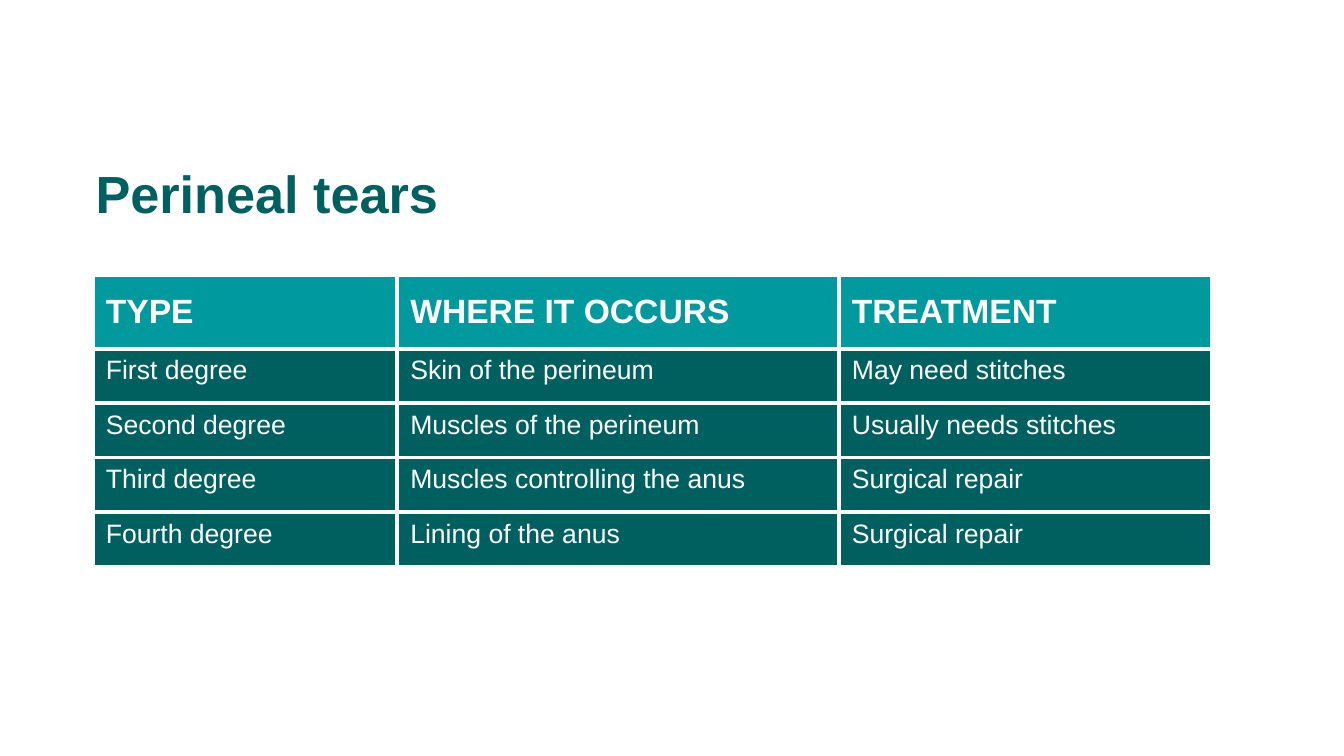
from dataclasses import dataclass

from lxml import etree
from pptx import Presentation
from pptx import util as u
from pptx.dml.color import RGBColor
from pptx.enum import text
from pptx.oxml import ns

EMU_PER_PX = 9144  # 100 px to the inch
FONT = "Arial"
WHITE = RGBColor(0xFF, 0xFF, 0xFF)
TEAL = RGBColor(0x00, 0x99, 0x9E)
DARK_TEAL = RGBColor(0x00, 0x60, 0x60)
BORDER_PT = 3
COLUMN_WIDTHS = (302, 438, 370)


@dataclass(frozen=True)
class RowStyle:
    height: int
    fill: RGBColor
    size: float
    bold: bool
    anchor: text.MSO_ANCHOR


HEADER = RowStyle(73, TEAL, 24, True, text.MSO_ANCHOR.MIDDLE)
BODY = RowStyle(54, DARK_TEAL, 19, False, text.MSO_ANCHOR.TOP)

ROWS = (
    (HEADER, ("TYPE", "WHERE IT OCCURS", "TREATMENT")),
    (BODY, ("First degree", "Skin of the perineum", "May need stitches")),
    (BODY, ("Second degree", "Muscles of the perineum", "Usually needs stitches")),
    (BODY, ("Third degree", "Muscles controlling the anus", "Surgical repair")),
    (BODY, ("Fourth degree", "Lining of the anus", "Surgical repair")),
)


def px(length: int) -> u.Emu:
    return u.Emu(length * EMU_PER_PX)


def write(frame, content: str, *, size: float, color: RGBColor,
          bold: bool = False, line_spacing: float = 1.0) -> None:
    para = frame.paragraphs[0]
    para.line_spacing = line_spacing
    span = para.add_run()
    span.text = content
    span.font.name = FONT
    span.font.size = u.Pt(size)
    span.font.bold = bold
    span.font.color.rgb = color


def add_borders(cell, color: RGBColor) -> None:
    """Line all four sides; call before filling, as lines precede the fill."""
    properties = cell._tc.get_or_add_tcPr()
    for side in ("lnL", "lnR", "lnT", "lnB"):
        line = etree.SubElement(properties, ns.qn(f"a:{side}"), w=str(u.Pt(BORDER_PT)))
        solid = etree.SubElement(line, ns.qn("a:solidFill"))
        etree.SubElement(solid, ns.qn("a:srgbClr"), val=str(color))


def draw_cell(cell, content: str, style: RowStyle) -> None:
    add_borders(cell, WHITE)
    cell.fill.solid()
    cell.fill.fore_color.rgb = style.fill
    cell.margin_left = cell.margin_right = px(13)
    cell.margin_top = cell.margin_bottom = px(7)
    cell.vertical_anchor = style.anchor
    write(cell.text_frame, content, size=style.size, color=WHITE, bold=style.bold)


def draw_title(page) -> None:
    box = page.shapes.add_textbox(px(85), px(162), px(1150), px(67))
    box.text_frame.word_wrap = True
    box.text_frame.vertical_anchor = text.MSO_ANCHOR.MIDDLE
    write(box.text_frame, "Perineal tears", size=37.3, color=DARK_TEAL,
          bold=True, line_spacing=0.9)


def draw_tears_table(page) -> None:
    height = sum(style.height for style, _ in ROWS)
    table = page.shapes.add_table(
        len(ROWS), len(COLUMN_WIDTHS), px(92), px(273),
        px(sum(COLUMN_WIDTHS)), px(height)).table
    for column, width in zip(table.columns, COLUMN_WIDTHS):
        column.width = px(width)
    for row, (style, contents) in zip(table.rows, ROWS):
        row.height = px(style.height)
        for cell, content in zip(row.cells, contents):
            draw_cell(cell, content, style)


def main() -> None:
    deck = Presentation()
    deck.slide_width, deck.slide_height = px(1333), px(750)
    page = deck.slides.add_slide(deck.slide_layouts[6])
    draw_title(page)
    draw_tears_table(page)
    deck.save("out.pptx")


if __name__ == "__main__":
    main()
